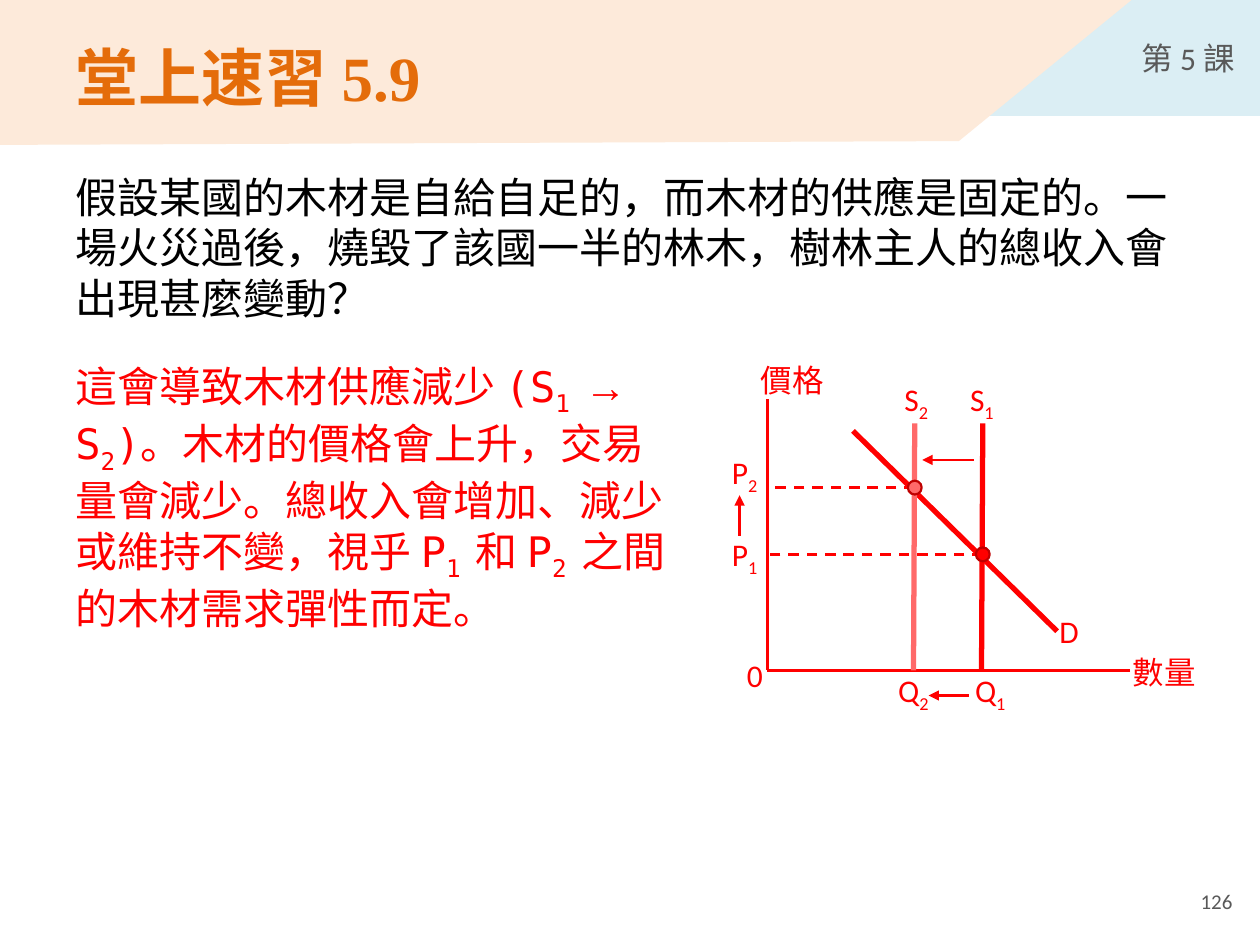
from pptx import Presentation
from pptx.dml.color import RGBColor
from pptx.enum.dml import MSO_LINE
from pptx.enum.shapes import MSO_CONNECTOR, MSO_SHAPE
from pptx.enum.text import MSO_ANCHOR, PP_ALIGN
from pptx.oxml.ns import qn
from pptx.util import Inches, Pt
from lxml.etree import SubElement

SKY = RGBColor(0xDB, 0xEE, 0xF4)
PEACH = RGBColor(0xFD, 0xEA, 0xDA)
ORANGE = RGBColor(0xE4, 0x6C, 0x0A)
GREY = RGBColor(0x59, 0x59, 0x59)
BLACK = RGBColor(0, 0, 0)
RED = RGBColor(0xFF, 0, 0)
PINK = RGBColor(0xFF, 0x69, 0x69)
DARK_RED = RGBColor(0xC0, 0, 0)
MONO = "DejaVu Sans Mono"


def set_font(paragraph, size, name, color, bold=False):
    font = paragraph.font
    font.size, font.name, font.bold = Pt(size), name, bold
    font.color.rgb = color


def add_run(paragraph, text, subscript=False, name=None):
    run = paragraph.add_run()
    run.text = text
    if name:
        run.font.name = name
    if subscript:
        run.font._element.set("baseline", "-25000")


def add_text(slide, box, text, size, name, color, bold=False,
             anchor=MSO_ANCHOR.TOP, align=PP_ALIGN.LEFT):
    frame = slide.shapes.add_textbox(*map(Inches, box)).text_frame
    frame.word_wrap = True
    frame.vertical_anchor = anchor
    paragraph = frame.paragraphs[0]
    paragraph.alignment = align
    set_font(paragraph, size, name, color, bold)
    if text:
        add_run(paragraph, text)
    return paragraph


def add_line(slide, start, end, color=RED, width=1.5, dashed=False, arrow=False):
    line = slide.shapes.add_connector(MSO_CONNECTOR.STRAIGHT, *map(Inches, (*start, *end)))
    line.line.color.rgb = color
    line.line.width = Pt(width)
    if dashed:
        line.line.dash_style = MSO_LINE.DASH
    if arrow:
        SubElement(line.line._get_or_add_ln(), qn("a:tailEnd"), type="triangle")
    SubElement(line._element.spPr, qn("a:effectLst"))


def fill_plain(shape, color):
    shape.shadow.inherit = False
    shape.fill.solid()
    shape.fill.fore_color.rgb = color
    shape.line.fill.background()


def add_header(slide, left, top, width):
    tag_width = 2.64
    lesson = slide.shapes.add_shape(
        MSO_SHAPE.RECTANGLE, Inches(left + width - tag_width), Inches(top),
        Inches(tag_width), Inches(0.92))
    fill_plain(lesson, SKY)
    lesson.text_frame.margin_right = Inches(0.2)
    lesson.text_frame.vertical_anchor = MSO_ANCHOR.MIDDLE
    label = lesson.text_frame.paragraphs[0]
    label.alignment = PP_ALIGN.RIGHT
    set_font(label, 18, "Calibri", GREY)
    add_run(label, "第 5 課")

    corners = [(0, 0), (8.98, 0), (7.61, 1.12), (0, 1.15)]
    points = [(Inches(left + x), Inches(top + y)) for x, y in corners]
    builder = slide.shapes.build_freeform(*points[0])
    builder.add_line_segments(points[1:], close=True)
    fill_plain(builder.convert_to_shape(), PEACH)
    add_text(slide, (left + 0.5, top + 0.21, 7.49, 0.79), "堂上速習 5.9", 36,
             "Times New Roman", ORANGE, bold=True, anchor=MSO_ANCHOR.MIDDLE)


def add_question(slide, box):
    add_text(slide, box,
             "假設某國的木材是自給自足的，而木材的供應是固定的。一場火災過後，"
             "燒毀了該國一半的林木，樹林主人的總收入會出現甚麼變動？",
             24, "Arial", BLACK)


def add_answer(slide, box):
    answer = add_text(slide, box, "", 24, "Arial", RED)
    for text, subscript, name in [
        ("這會導致木材供應減少", False, "Arial"),
        (" (S", False, MONO), ("1 ", True, MONO),
        ("→", False, "Arial"),
        (" S", False, MONO), ("2", True, MONO), (")", False, MONO),
        ("。木材的價格會上升，交易量會減少。總收入會增加、減少或維持不變，視乎 ", False, "Arial"),
        ("P", False, MONO), ("1 ", True, MONO),
        ("和 ", False, "Arial"),
        ("P", False, MONO), ("2 ", True, MONO),
        ("之間的木材需求彈性而定。", False, "Arial"),
    ]:
        add_run(answer, text, subscript, name)


def add_diagram(slide, left, top):
    def at(x, y):
        return left + x, top + y

    def label(x, y, width, text, subscript=""):
        paragraph = add_text(slide, (*at(x, y), width, 0.4), text, 18, "Calibri", RED)
        if subscript:
            add_run(paragraph, subscript, subscript=True)

    axis_x, axis_y = 0.39, 2.52
    price_1, price_2 = 1.6, 1.07
    quantity_1, quantity_2 = 2.1, 1.56
    dot = 0.11

    add_line(slide, at(1.07, 0.62), at(2.69, 2.21), width=3)
    add_line(slide, at(axis_x, 0.37), at(axis_x, axis_y))
    add_line(slide, at(3.27, axis_y), at(axis_x, axis_y))
    add_line(slide, at(quantity_1, price_1), at(axis_x, price_1), dashed=True)
    add_line(slide, at(quantity_2, price_2), at(axis_x, price_2), dashed=True)
    for start, end in [((1.99, 2.72), (1.67, 2.72)),
                       ((0.17, 1.45), (0.17, 1.13)),
                       ((2.03, 0.85), (1.62, 0.85))]:
        add_line(slide, at(*start), at(*end), arrow=True)

    for quantity, price, color in [(quantity_1, price_1, RED), (quantity_2, price_2, PINK)]:
        add_line(slide, at(quantity, 0.56), at(quantity - 0.01, axis_y), color, 3)
        corner = at(quantity - dot / 2, price - dot / 2)
        point = slide.shapes.add_shape(MSO_SHAPE.OVAL, *map(Inches, (*corner, dot, dot)))
        fill_plain(point, color)
        point.line.color.rgb = DARK_RED
        point.line.width = Pt(1.25)

    label(0.24, 0.02, 0.72, "價格")
    label(3.19, 2.33, 0.84, "數量")
    label(0.13, 2.36, 0.58, "0")
    label(2.61, 2.01, 0.4, "D")
    label(1.9, 0.17, 0.55, "S", "1")
    label(1.38, 0.17, 0.44, "S", "2")
    label(0.01, 1.4, 0.42, "P", "1")
    label(0.01, 0.75, 0.42, "P", "2")
    label(1.94, 2.48, 0.57, "Q", "1")
    label(1.33, 2.48, 0.54, "Q", "2")


def add_page_number(slide, box):
    add_text(slide, box, "126", 12, "Calibri", GREY,
             anchor=MSO_ANCHOR.MIDDLE, align=PP_ALIGN.RIGHT)


def main():
    deck = Presentation()
    deck.slide_width, deck.slide_height = Inches(10), Inches(7.5)
    slide = deck.slides.add_slide(deck.slide_layouts[6])
    add_header(slide, 0, 0, 10)
    add_question(slide, (0.5, 1.31, 9, 1.31))
    add_answer(slide, (0.5, 2.81, 5.04, 2.61))
    add_diagram(slide, 5.7, 2.8)
    add_page_number(slide, (7.55, 6.95, 2.33, 0.4))
    deck.save("out.pptx")


if __name__ == "__main__":
    main()
